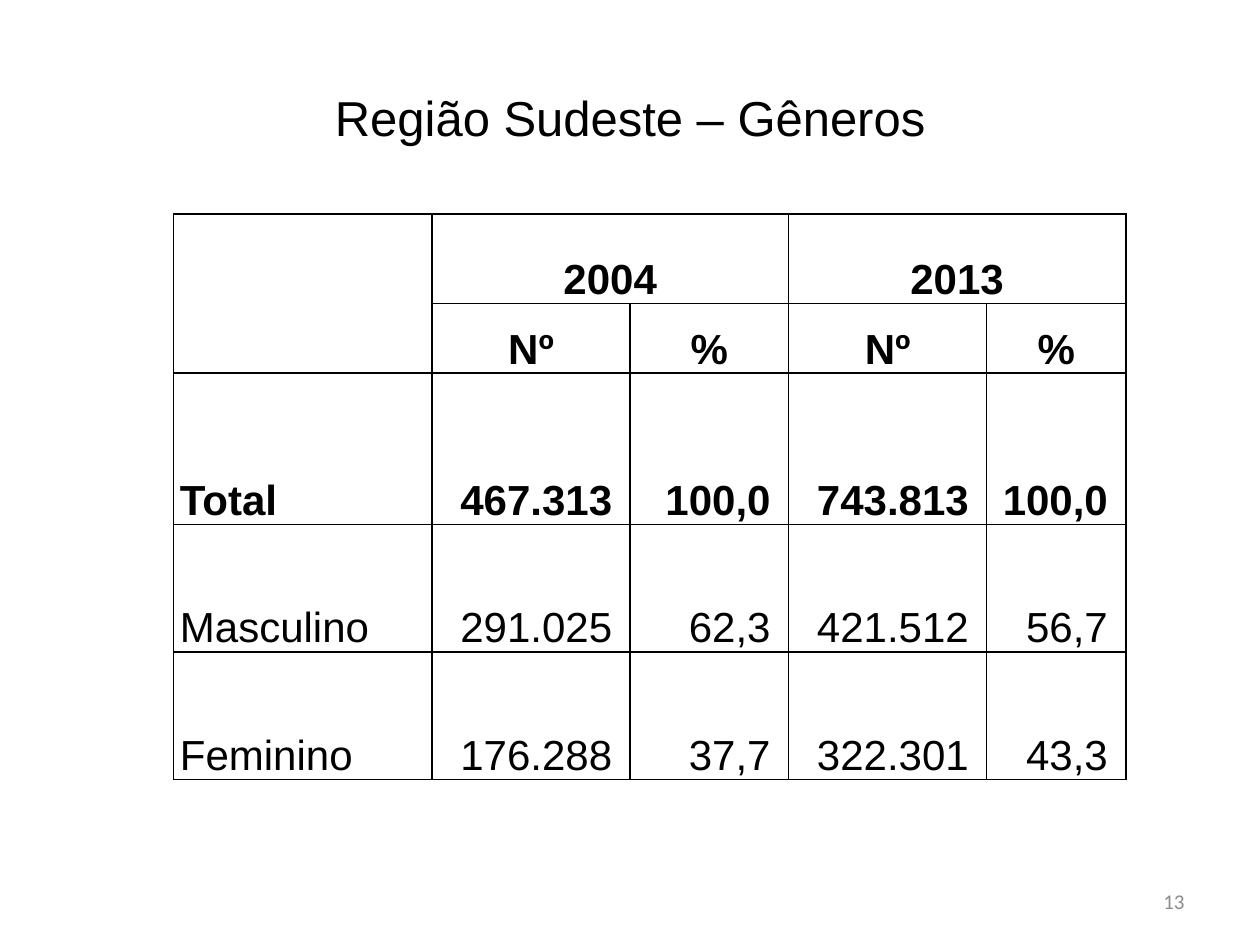
from lxml import etree
from pptx import Presentation
from pptx.dml.color import RGBColor
from pptx.enum.text import MSO_ANCHOR as Anchor, PP_ALIGN as Align
from pptx.oxml.ns import qn
from pptx.util import Pt

TITLE = "Região Sudeste – Gêneros"
PAGE = "13"
ROWS = [
    ["", "2004", "", "2013", ""],
    ["", "Nº", "%", "Nº", "%"],
    ["Total", "467.313 ", "100,0 ", "743.813 ", "100,0 "],
    ["Masculino", "291.025 ", "62,3 ", "421.512 ", "56,7 "],
    ["Feminino", "176.288 ", "37,7 ", "322.301 ", "43,3 "],
]
WIDTHS = [147.6, 113.3, 90.5, 113.3, 79.5]
HEIGHTS = [51, 39.8, 86.4, 72.9, 72.9]
MERGES = [((0, 0), (1, 0)), ((0, 1), (0, 2)), ((0, 3), (0, 4))]
HEAD = 2
BLACK, GREY = "000000", "8C8C8C"


def style(par, size, face, color, align, bold=False):
    par.alignment = align
    font = par.font
    font.size, font.name, font.bold = Pt(size), face, bold
    font.color.rgb = RGBColor.from_string(color)


def place(shape, left, top, width, height):
    shape.left, shape.top = Pt(left), Pt(top)
    shape.width, shape.height = Pt(width), Pt(height)
    shape.text_frame.vertical_anchor = Anchor.MIDDLE
    shape.text_frame.word_wrap = True


def border(cell, color, width):
    props = cell._tc.get_or_add_tcPr()
    for n, side in enumerate(("lnL", "lnR", "lnT", "lnB")):
        line = etree.Element(qn("a:" + side), w=str(Pt(width)))
        fill = etree.SubElement(line, qn("a:solidFill"))
        etree.SubElement(fill, qn("a:srgbClr"), val=color)
        props.insert(n, line)


def fill_cell(cell, words, row, col):
    cell.fill.background()
    border(cell, BLACK, 1)
    cell.margin_left = cell.margin_right = Pt(3.6)
    cell.margin_top = cell.margin_bottom = 0
    cell.vertical_anchor = Anchor.BOTTOM
    cell.text = words
    par = cell.text_frame.paragraphs[0]
    par.line_spacing = 1.07
    align = Align.CENTER if row < HEAD else Align.RIGHT if col else Align.LEFT
    style(par, 24, "Arial", BLACK, align, row <= HEAD)


def main():
    deck = Presentation()
    deck.slide_width, deck.slide_height = Pt(720), Pt(540)
    slide = deck.slides.add_slide(deck.slide_layouts[5])

    title = slide.shapes.title
    place(title, 36, 21.6, 648, 90)
    title.text = TITLE
    style(title.text_frame.paragraphs[0], 28, "Arial", BLACK, Align.CENTER)

    frame = slide.shapes.add_table(
        len(ROWS), len(WIDTHS), Pt(99.2), Pt(122.4),
        Pt(sum(WIDTHS)), Pt(sum(HEIGHTS)))
    table = frame.table
    table.first_row = table.horz_banding = False
    for col, width in zip(table.columns, WIDTHS):
        col.width = Pt(width)
    for row, height in zip(table.rows, HEIGHTS):
        row.height = Pt(height)
    for r, row in enumerate(ROWS):
        for c, words in enumerate(row):
            fill_cell(table.cell(r, c), words, r, c)
    for start, end in MERGES:
        table.cell(*start).merge(table.cell(*end))

    page = slide.shapes.add_textbox(0, 0, 0, 0)
    place(page, 516, 500.5, 168, 28.75)
    page.text_frame.text = PAGE
    style(page.text_frame.paragraphs[0], 12, "Calibri", GREY, Align.RIGHT)

    deck.save("out.pptx")


if __name__ == "__main__":
    main()
